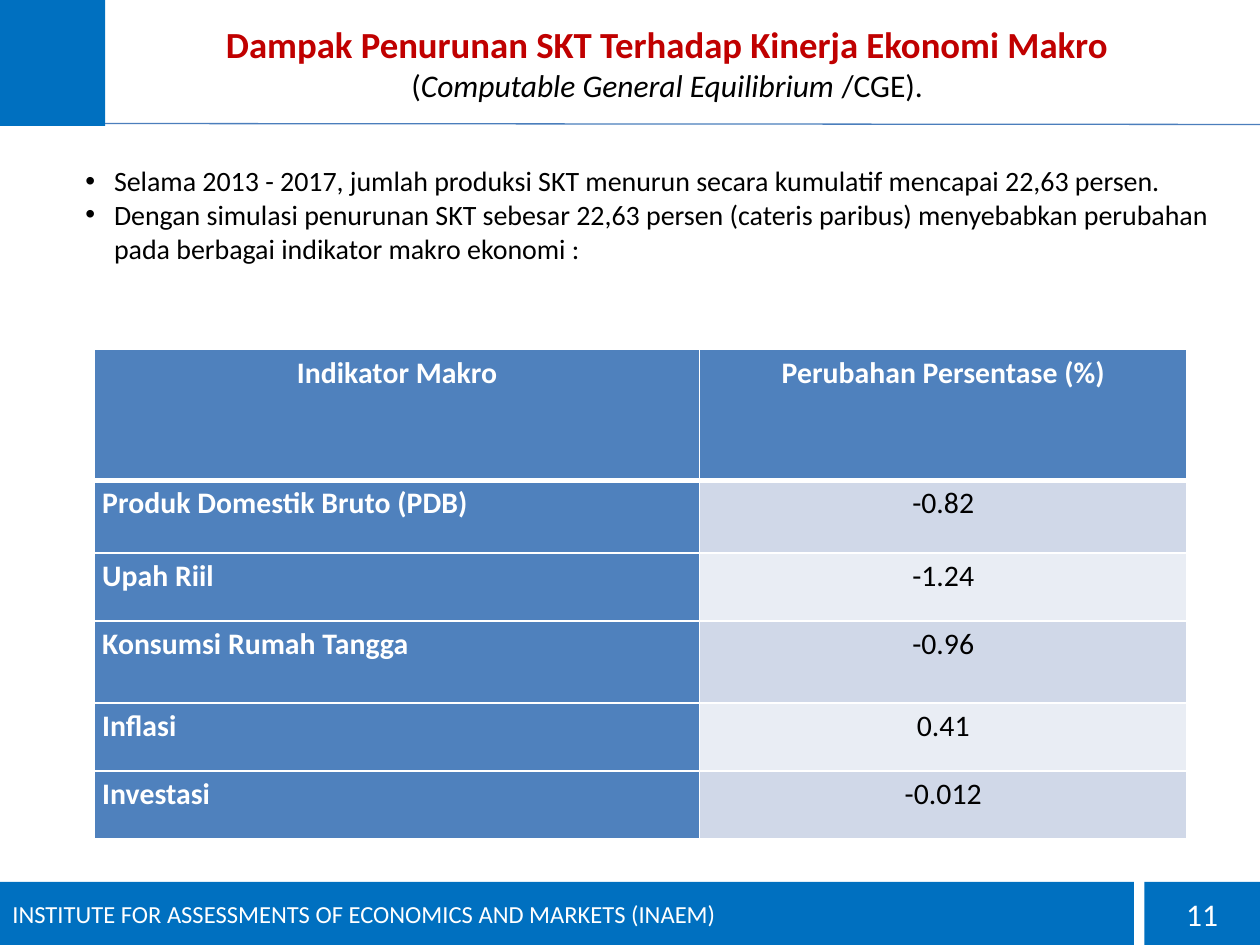
"""Build the slide on the macroeconomic impact of falling SKT output."""
from lxml.etree import SubElement
from pptx import Presentation
from pptx.dml.color import RGBColor
from pptx.enum.shapes import MSO_CONNECTOR, MSO_SHAPE
from pptx.enum.text import MSO_ANCHOR, PP_ALIGN
from pptx.oxml.ns import qn
from pptx.util import Cm, Pt

RECT = MSO_SHAPE.RECTANGLE
LINE = MSO_CONNECTOR.STRAIGHT
MID = MSO_ANCHOR.MIDDLE
LEFT, MIDST = PP_ALIGN.LEFT, PP_ALIGN.CENTER


class Theme:
    font = "Calibri"
    red, black, white = "C00000", "000000", "FFFFFF"
    blue, rule, head = "0070C0", "4B7EBC", "4F81BD"
    bands = ("D0D8E8", "E9EDF4")
    title, sub, cell, body, foot, page = 21, 18, 17, 16, 14, 18


def write(para, text, size, color=Theme.black, bold=False, italic=False, align=LEFT):
    para.alignment = align
    run = para.add_run()
    run.text = text
    font = run.font
    font.name, font.size = Theme.font, Pt(size)
    font.bold, font.italic = bold, italic
    font.color.rgb = RGBColor.from_string(color)


def block(left, top, width, height):
    box = slide.shapes.add_shape(RECT, Cm(left), Cm(top), Cm(width), Cm(height))
    box.shadow.inherit = False
    box.fill.solid()
    box.fill.fore_color.rgb = RGBColor.from_string(Theme.blue)
    box.line.fill.background()
    box.text_frame.word_wrap = True
    box.text_frame.vertical_anchor = MID
    return box.text_frame.paragraphs[0]


deck = Presentation()
deck.slide_width, deck.slide_height = Cm(25.4), Cm(19.05)
slide = deck.slides.add_slide(deck.slide_layouts[6])

title = slide.shapes.add_textbox(Cm(2.34), Cm(0.23), Cm(22.22), Cm(2.06)).text_frame
title.word_wrap = True
title.vertical_anchor = MID
write(title.paragraphs[0], "Dampak Penurunan SKT Terhadap Kinerja Ekonomi Makro",
      Theme.title, Theme.red, bold=True, align=MIDST)
para = title.add_paragraph()
for text, slant in (("(", False), ("Computable General Equilibrium", True), (" /CGE).", False)):
    write(para, text, Theme.sub, italic=slant, align=MIDST)

rows = [
    ("Indikator Makro", "Perubahan Persentase (%)", 2.64),
    ("Produk Domestik Bruto (PDB)", "-0.82", 1.47),
    ("Upah Riil", "-1.24", 1.37),
    ("Konsumsi Rumah Tangga", "-0.96", 1.65),
    ("Inflasi", "0.41", 1.37),
    ("Investasi", "-0.012", 1.37),
]
high = sum(row[2] for row in rows)
table = slide.shapes.add_table(len(rows), 2, Cm(1.91), Cm(7.04), Cm(22.02), Cm(high)).table
for col, width in zip(table.columns, (12.19, 9.83)):
    col.width = Cm(width)
for r, (name, value, height) in enumerate(rows):
    table.rows[r].height = Cm(height)
    for c, text in enumerate((name, value)):
        cell = table.cell(r, c)
        cell.margin_left = cell.margin_right = Cm(0.15)
        cell.margin_top = cell.margin_bottom = 0
        props = cell._tc.get_or_add_tcPr()
        for side in "LRTB":
            thick = (r, side) in ((0, "B"), (1, "T"))
            edge = SubElement(props, qn(f"a:ln{side}"), w=str(Pt(3 if thick else 1)))
            SubElement(SubElement(edge, qn("a:solidFill")), qn("a:srgbClr"), val=Theme.white)
        dark = r == 0 or c == 0
        cell.fill.solid()
        cell.fill.fore_color.rgb = RGBColor.from_string(
            Theme.head if dark else Theme.bands[(r - 1) % 2])
        para = cell.text_frame.paragraphs[0]
        para.line_spacing = 1.15
        para.space_before = para.space_after = Pt(3)
        write(para, text, Theme.cell, Theme.white if dark else Theme.black,
              bold=dark, align=MIDST if r == 0 or c else LEFT)

body = slide.shapes.add_textbox(Cm(1.47), Cm(3.18), Cm(23.29), Cm(2.31)).text_frame
body.word_wrap = True
points = (
    "Selama 2013 - 2017, jumlah produksi SKT menurun secara kumulatif mencapai 22,63 persen.",
    "Dengan simulasi penurunan SKT sebesar 22,63 persen (cateris paribus) "
    "menyebabkan perubahan pada berbagai indikator makro ekonomi :",
)
for i, text in enumerate(points):
    para = body.add_paragraph() if i else body.paragraphs[0]
    write(para, text, Theme.body)
    props = para._p.get_or_add_pPr()
    props.set("marL", str(Cm(0.58)))
    props.set("indent", str(-Cm(0.58)))
    SubElement(props, qn("a:buFont"), typeface="Arial")
    SubElement(props, qn("a:buChar"), char="•")

block(0, 0, 2.12, 2.54)
rule = slide.shapes.add_connector(LINE, Cm(2.12), Cm(2.49), Cm(25.4), Cm(2.51))
rule.line.color.rgb = RGBColor.from_string(Theme.rule)
rule.line.width = Pt(0.75)
SubElement(rule._element.spPr, qn("a:effectLst"))

write(block(0, 17.78, 22.86, 1.27), "INSTITUTE FOR ASSESSMENTS OF ECONOMICS AND MARKETS (INAEM)",
      Theme.foot, Theme.white)
write(block(23.07, 17.78, 2.33, 1.27), "11", Theme.page, Theme.white, align=MIDST)

deck.save("out.pptx")
